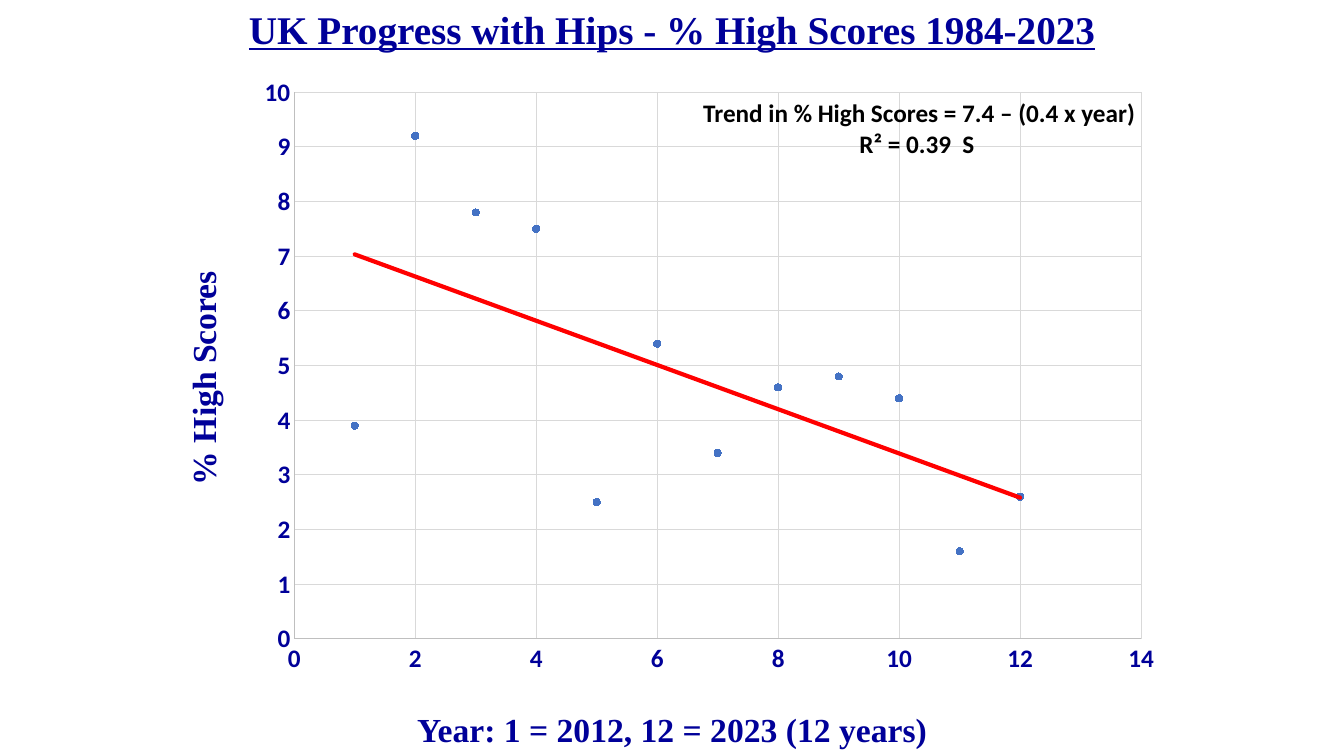
from lxml import etree
from pptx import Presentation
from pptx.chart.data import XyChartData
from pptx.dml.color import RGBColor
from pptx.enum.chart import XL_CHART_TYPE as CT, XL_MARKER_STYLE as MS, XL_TICK_LABEL_POSITION as TL, XL_TICK_MARK as TM
from pptx.enum.text import MSO_ANCHOR as VA, PP_ALIGN as PA
from pptx.oxml import parse_xml
from pptx.oxml.ns import nsdecls, qn
from pptx.util import Inches, Pt

NAVY = RGBColor(0x00, 0x00, 0x99)
BLACK = RGBColor(0x00, 0x00, 0x00)
RED = RGBColor(0xFF, 0x00, 0x00)
BLUE = RGBColor(0x44, 0x72, 0xC4)
AXIS_GREY = RGBColor(0xBF, 0xBF, 0xBF)
GRID_GREY = RGBColor(0xD9, 0xD9, 0xD9)
SERIF, SANS = "Times New Roman", "Calibri"
WIDTH, HEIGHT = 13.33, 7.5
SCORES = [3.9, 9.2, 7.8, 7.5, 2.5, 5.4, 3.4, 4.6, 4.8, 4.4, 1.6, 2.6]
PLOT = {"x": 0.055, "y": 0.025, "w": 0.908, "h": 0.872}


def set_font(font, color, **values):
    """Apply a colour and a set of format values to a font."""
    for name, value in values.items():
        setattr(font, name, value)
    font.color.rgb = color


def set_line(line, color, width):
    """Give a line its colour and width in points."""
    line.color.rgb = color
    line.width = Pt(width)


def write(sp, lines, color, name, size, **values):
    """Write aligned lines of bold text into a shape."""
    tf = sp.text_frame
    tf.word_wrap = True
    tf.vertical_anchor = VA.TOP
    for i, (text, align) in enumerate(lines):
        p = tf.add_paragraph() if i else tf.paragraphs[0]
        p.alignment = align
        r = p.add_run()
        r.text = text
        set_font(r.font, color, name=name, size=Pt(size), bold=True, **values)


def add_title(s, box, text):
    """Place the underlined slide title in the box."""
    sp = s.shapes.title
    sp.left, sp.top, sp.width, sp.height = map(Inches, box)
    write(sp, [(text, PA.CENTER)], NAVY, SERIF, 28, underline=True)


def add_label(s, box, lines, color=NAVY, name=SERIF, size=24, rotation=0):
    """Place a text box, turned if asked, in the box."""
    sp = s.shapes.add_textbox(*map(Inches, box))
    sp.rotation = rotation
    write(sp, lines, color, name, size)


def format_axis(axis, top, step):
    """Scale an axis from zero and style its lines and labels."""
    values = {"minimum_scale": 0, "maximum_scale": top, "major_unit": step,
              "has_major_gridlines": True, "has_title": False,
              "major_tick_mark": TM.NONE, "minor_tick_mark": TM.NONE,
              "tick_label_position": TL.NEXT_TO_AXIS}
    for name, value in values.items():
        setattr(axis, name, value)
    set_line(axis.format.line, AXIS_GREY, 0.75)
    set_line(axis.major_gridlines.format.line, GRID_GREY, 0.75)
    set_font(axis.tick_labels.font, NAVY, name=SANS, size=Pt(18), bold=True)


def add_trend(series):
    """Add a linear trend line ahead of the series' x values."""
    trend = parse_xml(
        f'<c:trendline {nsdecls("c", "a")}><c:spPr><a:ln w="{Pt(3)}" cap="rnd"><a:solidFill>'
        f'<a:srgbClr val="{RED}"/></a:solidFill></a:ln></c:spPr><c:trendlineType val="linear"/>'
        '<c:dispRSqr val="0"/><c:dispEq val="0"/></c:trendline>')
    series._element.find(qn("c:xVal")).addprevious(trend)


def fix_plot(chart):
    """Set the inner plot area as shares of the chart."""
    area = chart._chartSpace.chart.plotArea
    for old in area.findall(qn("c:layout")):
        area.remove(old)
    layout = etree.Element(qn("c:layout"))
    manual = etree.SubElement(layout, qn("c:manualLayout"))
    settings = {"layoutTarget": "inner", "xMode": "edge", "yMode": "edge", **PLOT}
    for name, value in settings.items():
        etree.SubElement(manual, qn(f"c:{name}")).set("val", str(value))
    area.insert(0, layout)


def add_scatter(s, box):
    """Place the scatter chart of yearly scores in the box."""
    data = XyChartData()
    points = data.add_series("Series 1")
    for year, score in enumerate(SCORES, 1):
        points.add_data_point(year, score)
    chart = s.shapes.add_chart(CT.XY_SCATTER, *map(Inches, box), data).chart
    chart.has_legend = chart.has_title = False
    set_font(chart.font, BLACK, name=SANS, size=Pt(10))
    format_axis(chart.category_axis, 14, 2)
    format_axis(chart.value_axis, 10, 1)
    chart.plots[0].vary_by_categories = False
    series = chart.plots[0].series[0]
    series.format.line.fill.background()
    series.marker.style, series.marker.size = MS.CIRCLE, 5
    fmt = series.marker.format
    fmt.fill.solid()
    fmt.fill.fore_color.rgb = BLUE
    set_line(fmt.line, BLUE, 0.75)
    add_trend(series)
    fix_plot(chart)


def main():
    """Build the slide and save it."""
    prs = Presentation()
    prs.slide_width, prs.slide_height = Inches(WIDTH), Inches(HEIGHT)
    s = prs.slides.add_slide(prs.slide_layouts[5])
    left, width = WIDTH / 8, WIDTH * 3 / 4
    add_scatter(s, (2.41, 0.76, 9.25, 6.22))
    add_title(s, (left, 0, width, 0.57), "UK Progress with Hips - % High Scores 1984-2023")
    add_label(s, (left, 6.98, width, 0.5), [("Year: 1 = 2012, 12 = 2023 (12 years)", PA.CENTER)])
    add_label(s, (-0.63, 3.5, 5.28, 0.5), [("% High Scores", PA.CENTER)], rotation=270)
    add_label(s, (6.83, 0.92, 4.53, 0.71),
              [("Trend in % High Scores = 7.4 – (0.4 x year)", PA.RIGHT),
               ("R² = 0.39  S", PA.CENTER)], BLACK, SANS, 18)
    prs.save("out.pptx")


if __name__ == "__main__":
    main()
